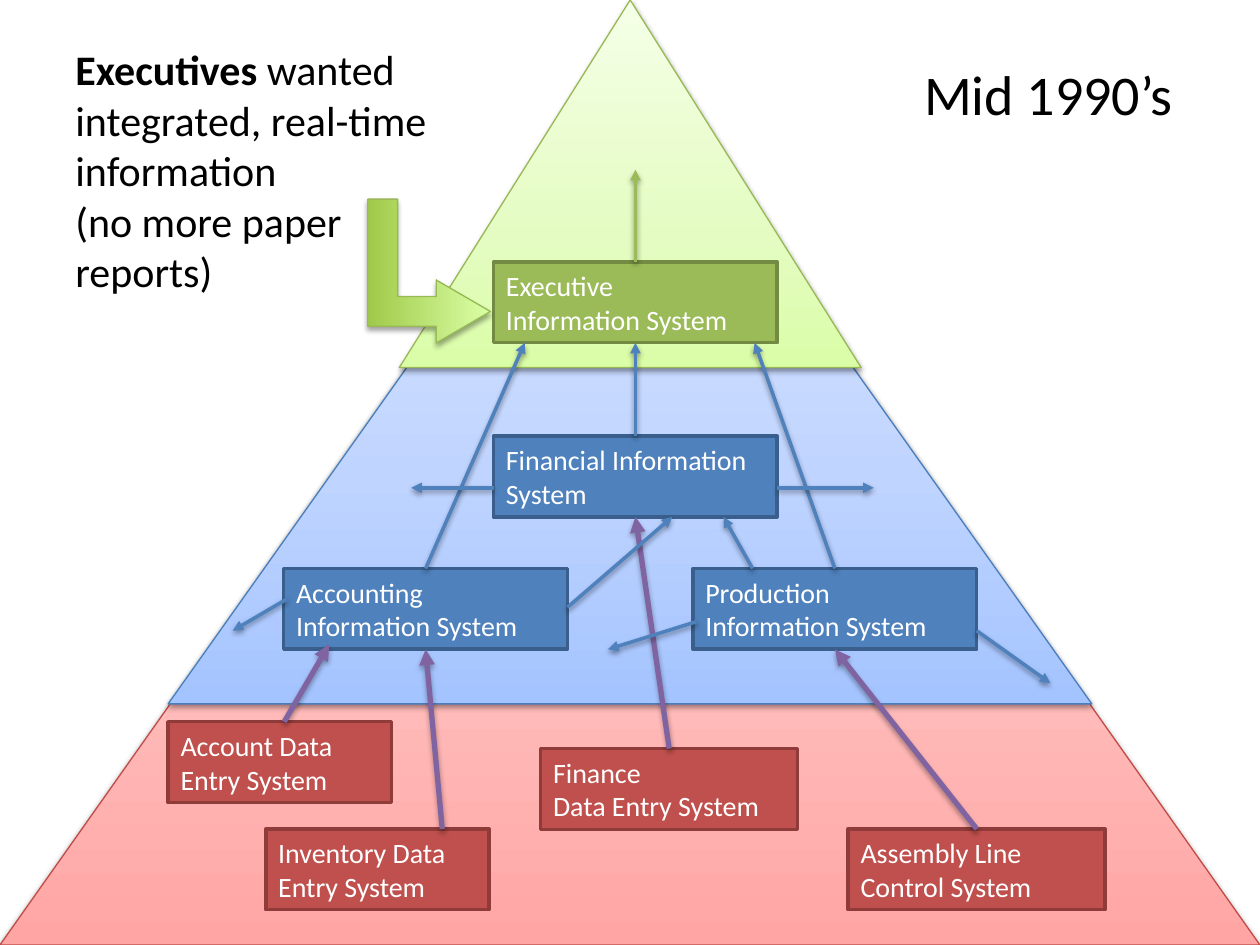
from lxml.etree import SubElement
from pptx import Presentation
from pptx.dml.color import RGBColor
from pptx.enum.shapes import MSO_CONNECTOR, MSO_SHAPE
from pptx.enum.text import MSO_ANCHOR, MSO_AUTO_SIZE, PP_ALIGN
from pptx.oxml import parse_xml
from pptx.oxml.ns import nsdecls, qn
from pptx.util import Cm, Pt

FONT = "Calibri"
COLORS = {
    "text": "000000", "light": "FFFFFF",
    "blue": "4F81BD", "blue_edge": "3A5F8C", "blue_tier_edge": "4B7EBC",
    "red": "C0504D", "red_edge": "8E3B39", "red_tier_edge": "BF4C48",
    "green": "9BBB59", "green_edge": "738A42", "green_tier_edge": "98B955",
    "purple": "8064A2",
}
GRADIENTS = {
    "red": [(0, "FFA6A5"), (35, "FFC0BF"), (100, "FFE7E7")],
    "blue": [(0, "A4C4FF"), (35, "BFD4FF"), (100, "E6EEFF")],
    "green": [(0, "DAFDA7"), (35, "E4FCC2"), (100, "F5FFE7")],
    "bent": [(0, "A0CA4A"), (100, "DAFFA5")],
}

# Boxes are left, top, width, height in cm
TIERS = [
    ("red", (0, 1.07, 25.4, 17.98)),
    ("blue", (3.39, 1.07, 18.62, 13.12)),
    ("green", (8.05, 0, 9.31, 7.41)),
]
BOX_HEIGHT = 1.63
WIDE, MEDIUM, NARROW = 5.72, 5.18, 4.5
SYSTEMS = {
    "accounting": ("Accounting Information System", "blue", (5.72, 11.46, WIDE, BOX_HEIGHT)),
    "inventory": ("Inventory Data Entry System", "red", (5.36, 16.71, NARROW, BOX_HEIGHT)),
    "financial": ("Financial Information System", "blue", (9.95, 8.79, WIDE, BOX_HEIGHT)),
    "finance": ("Finance\vData Entry System", "red", (10.9, 15.09, MEDIUM, BOX_HEIGHT)),
    "production": ("Production Information System", "blue", (13.97, 11.46, WIDE, BOX_HEIGHT)),
    "assembly": ("Assembly Line\nControl System", "red", (17.1, 16.71, MEDIUM, BOX_HEIGHT)),
    "account": ("Account Data Entry System", "red", (3.39, 14.55, NARROW, BOX_HEIGHT)),
    "executive": ("Executive\vInformation System", "green", (9.95, 5.28, WIDE, BOX_HEIGHT)),
}

# Each end is a system and a fraction of its width and height
TOP, BOTTOM = (0.5, 0), (0.5, 1)
FLOWS = [
    ("accounting", TOP, "executive", (0.11, 1)),
    ("inventory", (0.79, 0), "accounting", BOTTOM),
    ("financial", TOP, "executive", BOTTOM),
    ("finance", TOP, "financial", BOTTOM),
    ("production", TOP, "executive", (0.92, 1)),
    ("assembly", TOP, "production", BOTTOM),
    ("account", (0.52, 0), "accounting", (0.16, 0.94)),
    ("executive", TOP, "executive", (0.5, -1.14)),
    ("financial", (1, 0.64), "financial", (1.34, 0.64)),
    ("financial", (0, 0.64), "financial", (-0.29, 0.64)),
    ("accounting", (0.01, 0.38), "accounting", (-0.18, 0.77)),
    ("production", (1, 0.77), "production", (1.26, 1.42)),
    ("production", (0.01, 0.66), "production", (-0.3, 1)),
    ("production", (0.21, 0), "financial", (0.81, 1)),
    ("accounting", (1, 0.48), "financial", (0.63, 1)),
]


def rgb(name):
    return RGBColor.from_string(COLORS[name])


def set_line(shape, color, width):
    shape.line.color.rgb = rgb(color)
    shape.line.width = Pt(width)


def set_gradient(shape, stops):
    """Run the gradient from the bottom of the shape to its top."""
    marks = "".join(f'<a:gs pos="{pos * 1000}"><a:srgbClr val="{color}"/></a:gs>'
                    for pos, color in stops)
    fill = parse_xml(f'<a:gradFill {nsdecls("a")} rotWithShape="1"><a:gsLst>{marks}</a:gsLst>'
                     '<a:lin ang="16200000" scaled="0"/></a:gradFill>')
    shape.element.spPr.find(qn("a:prstGeom")).addnext(fill)


def set_shadow(shape, alpha, distance):
    """Drop a soft shadow straight down; call after the line is set."""
    shape.element.spPr.append(parse_xml(
        f'<a:effectLst {nsdecls("a")}><a:outerShdw blurRad="{Pt(3.1)}" dist="{Pt(distance)}" '
        'dir="5400000" rotWithShape="0"><a:srgbClr val="000000">'
        f'<a:alpha val="{alpha * 1000}"/></a:srgbClr></a:outerShdw></a:effectLst>'))


def add_tier(slide, color, box):
    tier = slide.shapes.add_shape(MSO_SHAPE.ISOSCELES_TRIANGLE, *map(Cm, box))
    set_gradient(tier, GRADIENTS[color])
    set_line(tier, f"{color}_tier_edge", 0.75)
    set_shadow(tier, 38, 1.6)


def add_system(slide, label, color, box):
    system = slide.shapes.add_shape(MSO_SHAPE.RECTANGLE, *map(Cm, box))
    system.shadow.inherit = False
    system.fill.solid()
    system.fill.fore_color.rgb = rgb(color)
    set_line(system, f"{color}_edge", 2)
    frame = system.text_frame
    frame.word_wrap = True
    frame.auto_size = MSO_AUTO_SIZE.SHAPE_TO_FIT_TEXT
    frame.vertical_anchor = MSO_ANCHOR.MIDDLE
    frame.text = label
    for paragraph in frame.paragraphs:
        style_paragraph(paragraph, 16, "light")


def add_flow(slide, source, start, target, end):
    def point(name, fraction):
        left, top, width, height = SYSTEMS[name][2]
        return Cm(left + fraction[0] * width), Cm(top + fraction[1] * height)

    color = SYSTEMS[source][1]
    from_entry = color == "red"
    flow = slide.shapes.add_connector(MSO_CONNECTOR.STRAIGHT,
                                      *point(source, start), *point(target, end))
    set_line(flow, "purple" if from_entry else color, 3 if from_entry else 2)
    SubElement(flow.line._get_or_add_ln(), qn("a:tailEnd"), type="triangle")
    set_shadow(flow, *((35, 1.8) if from_entry else (38, 1.6)))


def add_bent_arrow(slide, box):
    arrow = slide.shapes.add_shape(MSO_SHAPE.BENT_UP_ARROW, *map(Cm, box))
    arrow.rotation = 90
    for index, value in enumerate((0.243, 0.257, 0.442)):
        arrow.adjustments[index] = value
    set_gradient(arrow, GRADIENTS["bent"])
    set_line(arrow, "green_tier_edge", 0.75)
    set_shadow(arrow, 35, 1.8)


def style_paragraph(paragraph, size, color, align=PP_ALIGN.LEFT):
    paragraph.alignment = align
    paragraph.font.name = FONT
    paragraph.font.size = Pt(size)
    paragraph.font.color.rgb = rgb(color)


def add_caption(slide, box, lines, size, align, bold_lead=""):
    frame = slide.shapes.add_textbox(*map(Cm, box)).text_frame
    frame.word_wrap = True
    caption = frame.paragraphs[0]
    style_paragraph(caption, size, "text", align)
    if bold_lead:
        lead = caption.add_run()
        lead.text = bold_lead
        lead.font.bold = True
    for index, line in enumerate(lines):
        if index:
            caption.add_line_break()
        caption.add_run().text = line


def main():
    prs = Presentation()
    prs.slide_width, prs.slide_height = Cm(25.4), Cm(19.05)
    slide = prs.slides.add_slide(prs.slide_layouts[6])

    # Pyramid, from the widest tier up
    for tier in TIERS:
        add_tier(slide, *tier)

    # Captions
    add_caption(slide, (1.27, 0.76, 14.81, 8.76),
                ["wanted", "integrated, real-time", "information",
                 "(no more paper", "reports)"], 24, PP_ALIGN.LEFT, "Executives ")
    add_caption(slide, (12.27, 1.07, 11.63, 8.76), ["Mid 1990’s"], 32, PP_ALIGN.RIGHT)

    # Systems and the flows between them
    for system in SYSTEMS.values():
        add_system(slide, *system)
    add_bent_arrow(slide, (7.2, 4.23, 2.9, 2.47))
    for flow in FLOWS:
        add_flow(slide, *flow)

    prs.save("out.pptx")


if __name__ == "__main__":
    main()
